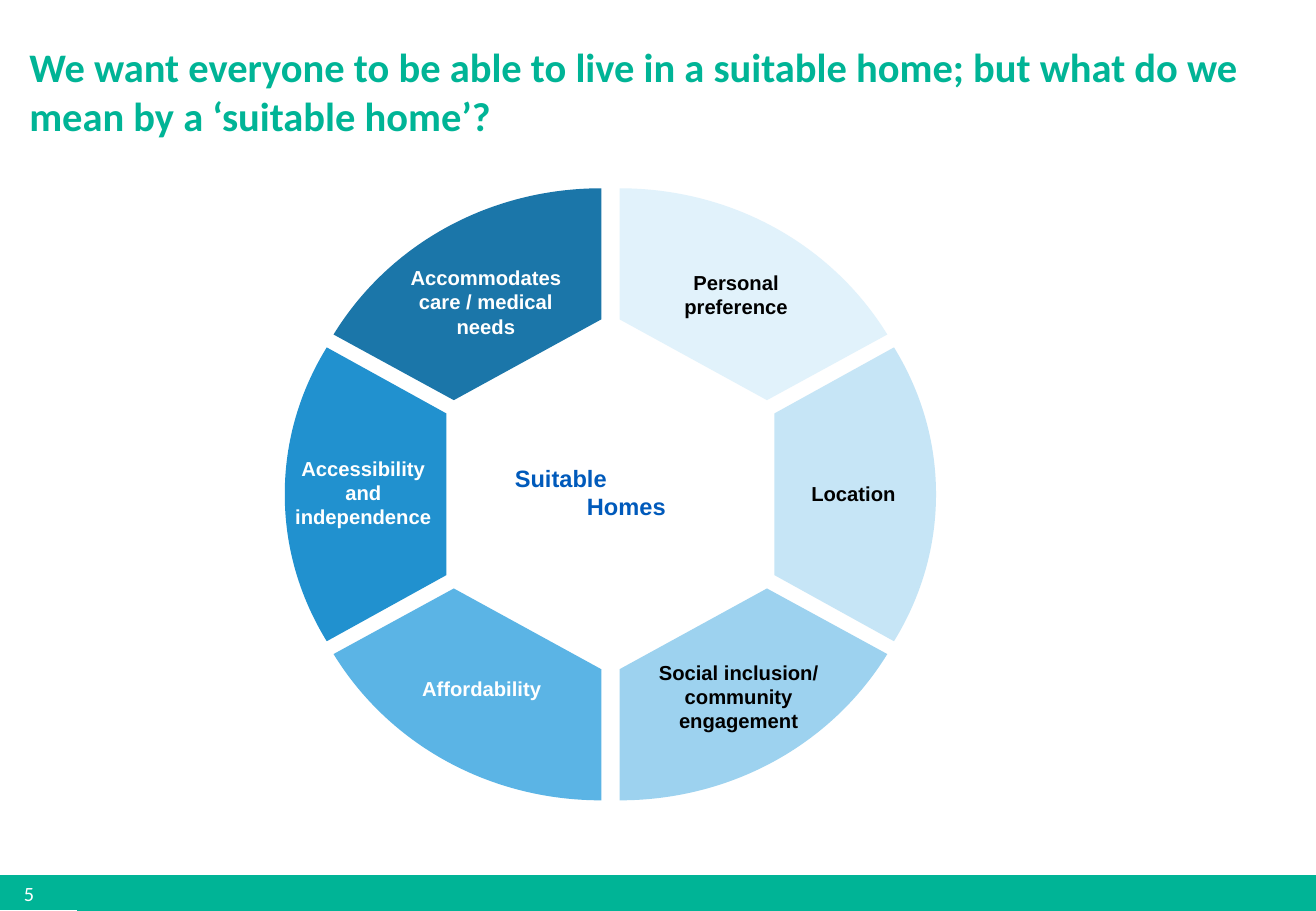
from pptx import Presentation
from pptx.dml.color import RGBColor
from pptx.enum import shapes, text
from pptx.oxml import ns
from pptx.util import Pt

GREEN = RGBColor(0x00, 0xB4, 0x96)
BLUE = RGBColor(0x00, 0x5A, 0xBB)
WHITE = RGBColor(0xFF, 0xFF, 0xFF)
BLACK = RGBColor(0x00, 0x00, 0x00)

SLIDE_W, SLIDE_H = 780, 540
CENTRED, LEFT = text.PP_ALIGN.CENTER, text.PP_ALIGN.LEFT
TOP, MIDDLE = text.MSO_ANCHOR.TOP, text.MSO_ANCHOR.MIDDLE

# Segment outlines around the ring centre, for the right and lower side.
# Each starts with its curves, three points to a curve after the first point.
DIAGONAL = [(5.4, 181.4), (70.9, 181.4), (130.7, 149), (164.1, 94.7),
            (92.8, 55.8), (5.4, 103.7)]
SIDE = [(168.1, -87.1), (184, -61.2), (193, -31.7), (193, 0),
        (193, 31.7), (184, 61.2), (168.1, 87.1),
        (97.2, 47.9), (97.2, -47.9)]

# name, colour, text colour, outline, curves, horizontal and vertical direction,
# label box relative to the ring centre
SEGMENTS = [
    ("Personal preference", RGBColor(0xE1, 0xF2, 0xFB), BLACK,
     DIAGONAL, 1, 1, -1, (38.5, -133.9, 72, 31)),
    ("Location", RGBColor(0xC6, 0xE5, 0xF6), BLACK,
     SIDE, 2, 1, 1, (115.6, -8.6, 56.9, 15.8)),
    ("Social inclusion/ community engagement", RGBColor(0x9D, 0xD2, 0xEF), BLACK,
     DIAGONAL, 1, 1, 1, (22.7, -3.5 + 100, 106.6, 46.8)),
    ("Affordability", RGBColor(0x5B, 0xB4, 0xE5), WHITE,
     DIAGONAL, 1, -1, 1, (-124.2, 108, 95.8, 14.4)),
    ("Accessibility and independence", RGBColor(0x21, 0x91, 0xCF), WHITE,
     SIDE, 2, -1, 1, (-190.4, -23, 87.8, 43.9)),
    ("Accommodates care / medical needs", RGBColor(0x1B, 0x76, 0xA9), WHITE,
     DIAGONAL, 1, -1, -1, (-124.9, -137.5, 102.2, 46.8)),
]


def write(frame, words, size, font, colour, align, anchor,
          insets=(0, 0, 0, 0), bold=True):
    frame.text = words
    frame.word_wrap = True
    frame.vertical_anchor = anchor
    (frame.margin_left, frame.margin_top,
     frame.margin_right, frame.margin_bottom) = map(Pt, insets)
    paragraph = frame.paragraphs[0]
    paragraph.alignment = align
    for run in paragraph.runs:
        run.font.size = Pt(size)
        run.font.name = font
        run.font.bold = bold
        run.font.color.rgb = colour


def add_title(slide, box):
    title = slide.shapes.add_textbox(*map(Pt, box))
    write(title.text_frame,
          "We want everyone to be able to live in a suitable home; "
          "but what do we mean by a ‘suitable home’?",
          24, "Calibri", GREEN, LEFT, TOP, (3, 3.6, 3, 3.6))


def add_footer(slide, box, number):
    """Draw the bottom band: a page number cell, then the rest of the bar."""
    left, top, width, height = box
    number_w, bar_x = 49.7, 46
    cells = [(left, number_w, height - 0.7, number),
             (left + bar_x, width - bar_x, height, "")]
    for x, w, h, words in cells:
        cell = slide.shapes.add_shape(shapes.MSO_SHAPE.RECTANGLE,
                                      Pt(x), Pt(top), Pt(w), Pt(h))
        cell.shadow.inherit = False
        cell.fill.solid()
        cell.fill.fore_color.rgb = GREEN
        cell.line.color.rgb = GREEN
        cell.line.width = Pt(0.75)
        if words:
            write(cell.text_frame, words, 12, "Calibri", WHITE, LEFT, MIDDLE,
                  (14.2, 0, 0, 0), bold=False)


def bend(segment, curves):
    """Turn each leading group of three straight lines into one Bézier curve."""
    lines = segment.element.xpath(".//a:lnTo")
    for i in range(0, 3 * curves, 3):
        curve, *others = lines[i:i + 3]
        curve.tag = ns.qn("a:cubicBezTo")
        for line in others:
            curve.append(line[0])
            line.getparent().remove(line)


def add_segment(slide, points, curves, colour):
    builder = slide.shapes.build_freeform(*points[0])
    builder.add_line_segments(points[1:], close=True)
    segment = builder.convert_to_shape()
    bend(segment, curves)
    segment.shadow.inherit = False
    segment.fill.solid()
    segment.fill.fore_color.rgb = colour
    segment.line.fill.background()


def add_hub(slide, box):
    """Write the centre words, the second one on an indented line."""
    hub = slide.shapes.add_textbox(*map(Pt, box))
    write(hub.text_frame, "Suitable Homes", 14, "Arial", BLUE, LEFT, TOP,
          (0, 0, 22, 0))
    properties = hub.text_frame.paragraphs[0]._p.get_or_add_pPr()
    properties.set("marL", str(Pt(44.7)))
    properties.set("indent", str(Pt(-42.7)))


def add_ring(slide, box):
    left, top, width, height = box
    cx, cy = left + width / 2, top + height / 2
    add_hub(slide, (cx - 58.7, cy - 18, 116.6, 36))
    for _, colour, _, outline, curves, across, down, _ in SEGMENTS:
        points = [(Pt(cx + across * x), Pt(cy + down * y)) for x, y in outline]
        add_segment(slide, points, curves, colour)
    for name, _, text_colour, *_, (x, y, w, h) in SEGMENTS:
        label = slide.shapes.add_textbox(Pt(cx + x), Pt(cy + y), Pt(w), Pt(h))
        write(label.text_frame, name, 12, "Arial", text_colour, CENTRED, MIDDLE)


def main():
    deck = Presentation()
    deck.slide_width, deck.slide_height = Pt(SLIDE_W), Pt(SLIDE_H)
    slide = deck.slides.add_slide(deck.slide_layouts[6])
    add_footer(slide, (0, 519.3, SLIDE_W, 20.7), "5")
    add_title(slide, (14.4, 21.6, 743.8, 61.2))
    add_ring(slide, (168.8, 111.6, 386, 362.8))
    deck.save("out.pptx")


if __name__ == "__main__":
    main()
